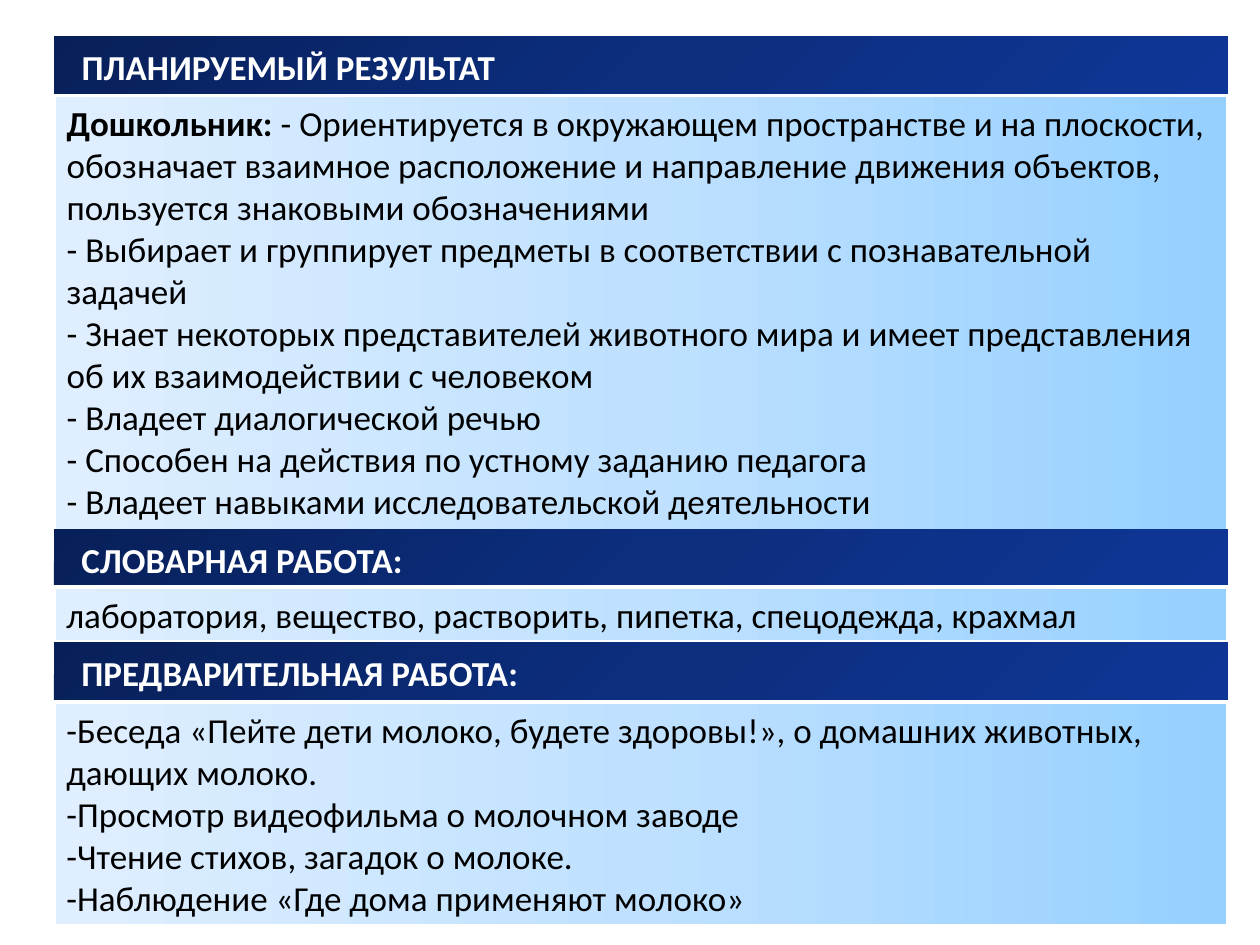
from copy import deepcopy
from dataclasses import dataclass

from lxml.etree import SubElement
from pptx import Presentation
from pptx.dml.color import RGBColor
from pptx.enum.shapes import MSO_SHAPE
from pptx.enum.text import MSO_ANCHOR, MSO_AUTO_SIZE, PP_ALIGN
from pptx.oxml.ns import qn
from pptx.util import Emu, Pt

PX_PER_INCH = 126
LEFT, WIDTH = 54, 1174
HEADER_HEIGHT = 58
HEADER_INDENT = 15
COLORS = {
    "navy_dark": "082059", "navy_mid": "0C2E7E", "navy": "0E3696",
    "sky": "96D0FF", "sky_mid": "BFE1FF", "sky_pale": "E0EFFF",
    "white": "FFFFFF", "black": "000000",
}


@dataclass
class Section:
    heading: str
    heading_top: int
    body_top: int
    body_height: int
    lines: list[str]
    lead: str = ""  # bold opening of the first line


SECTIONS = [
    Section("ПЛАНИРУЕМЫЙ РЕЗУЛЬТАТ", 36, 95, 437, [
        "- Ориентируется в окружающем пространстве и на плоскости, обозначает "
        "взаимное расположение и направление движения объектов, пользуется "
        "знаковыми обозначениями",
        "- Выбирает и группирует предметы в соответствии с познавательной задачей",
        "- Знает некоторых представителей животного мира и имеет представления "
        "об их взаимодействии с человеком",
        "- Владеет диалогической речью",
        "- Способен на действия по устному заданию педагога",
        "- Владеет навыками исследовательской деятельности",
    ], lead="Дошкольник: "),
    Section("СЛОВАРНАЯ РАБОТА:", 529, 587, 55, [
        "лаборатория, вещество, растворить, пипетка, спецодежда, крахмал",
    ]),
    Section("ПРЕДВАРИТЕЛЬНАЯ РАБОТА:", 642, 702, 224, [
        "-Беседа «Пейте дети молоко, будете здоровы!», о домашних животных, "
        "дающих молоко.",
        "-Просмотр видеофильма о молочном заводе",
        "-Чтение стихов, загадок о молоке.",
        "-Наблюдение «Где дома применяют молоко»",
    ]),
]


def px(n: int) -> Emu:
    return Emu(round(n * 914400 / PX_PER_INCH))


def rgb(name: str) -> RGBColor:
    return RGBColor.from_string(COLORS[name])


def set_gradient(s, names: list[str], angle: int) -> None:
    """Fill with evenly spaced stops; the angle runs counter-clockwise."""
    s.fill.gradient()
    stop_list = s._element.spPr.find(".//" + qn("a:gsLst"))
    stop_list.append(deepcopy(stop_list[0]))
    for i, (stop, name) in enumerate(zip(s.fill.gradient_stops, names)):
        stop.position = i / (len(names) - 1)
        stop.color.rgb = rgb(name)
    s.fill.gradient_angle = angle


def place(s, top: int, height: int) -> None:
    s.left, s.top, s.width, s.height = px(LEFT), px(top), px(WIDTH), px(height)
    tf = s.text_frame
    tf.word_wrap = True
    tf.vertical_anchor = MSO_ANCHOR.TOP
    tf.auto_size = MSO_AUTO_SIZE.NONE


def format_paragraph(p, color: str, bold: bool, align: PP_ALIGN, indent: int = 0) -> None:
    pPr = p._p.get_or_add_pPr()
    pPr.set("marL", "0")
    pPr.set("indent", str(px(indent)))
    SubElement(pPr, qn("a:buNone"))
    p.alignment = align
    p.space_before = Pt(0)
    for r in p.runs:
        r.font.name = "Calibri"
        r.font.size = Pt(20)
        r.font.bold = bold
        r.font.color.rgb = rgb(color)


def draw_heading(s, section: Section) -> None:
    place(s, section.heading_top, HEADER_HEIGHT)
    set_gradient(s, ["navy_dark", "navy_mid", "navy"], 315)
    s.line.fill.background()
    s.text_frame.text = section.heading
    p = s.text_frame.paragraphs[0]
    format_paragraph(p, "white", True, PP_ALIGN.JUSTIFY, HEADER_INDENT)
    p.line_spacing = 1.07
    p.space_after = Pt(8)


def draw_body(s, section: Section) -> None:
    place(s, section.body_top, section.body_height)
    set_gradient(s, ["sky", "sky_mid", "sky_pale"], 180)
    s.line.color.rgb = rgb("white")
    s.line.width = Pt(2.25)
    tf = s.text_frame
    tf.text = "\n".join(section.lines)
    if section.lead:
        p = tf.paragraphs[0]
        p.text = section.lead
        p.add_run().text = section.lines[0]
    for p in tf.paragraphs:
        format_paragraph(p, "black", False, PP_ALIGN.LEFT)
    if section.lead:
        tf.paragraphs[0].runs[0].font.bold = True


def add_panel(slide):
    s = slide.shapes.add_shape(MSO_SHAPE.RECTANGLE, 0, 0, px(WIDTH), px(HEADER_HEIGHT))
    s.shadow.inherit = False
    return s


def main() -> None:
    prs = Presentation()
    prs.slide_width, prs.slide_height = px(1260), px(945)
    slide = prs.slides.add_slide(prs.slide_layouts[1])

    # First section: title and body placeholders, with the title in front
    title, body = slide.placeholders[0], slide.placeholders[1]
    draw_heading(title, SECTIONS[0])
    draw_body(body, SECTIONS[0])
    body._element.addnext(title._element)

    # Remaining sections
    for section in SECTIONS[1:]:
        draw_heading(add_panel(slide), section)
        draw_body(add_panel(slide), section)

    prs.save("out.pptx")


if __name__ == "__main__":
    main()
